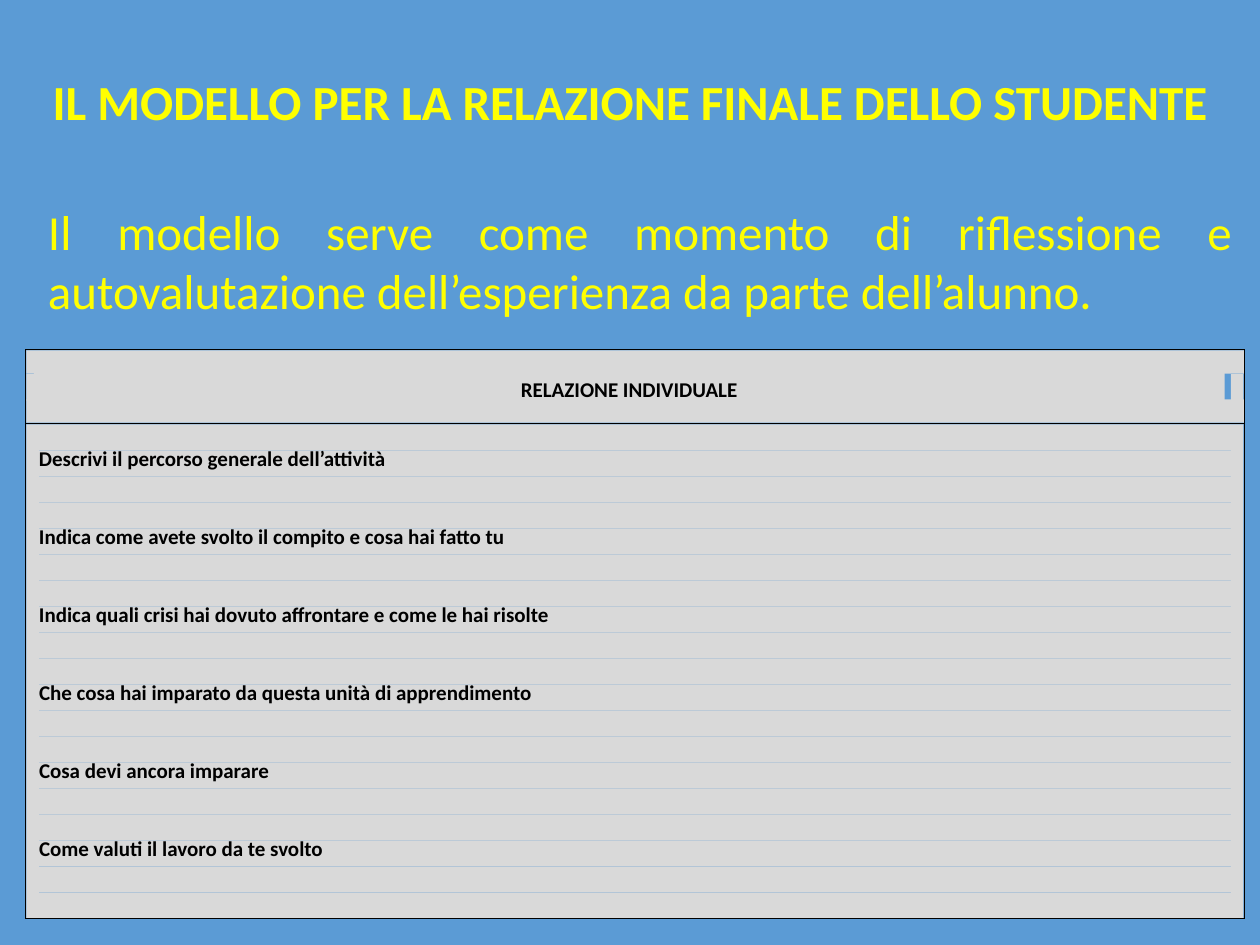
"""Build the slide that presents the student's final report form."""
from lxml import etree
from pptx import Presentation
from pptx.dml.color import RGBColor
from pptx.enum.shapes import MSO_CONNECTOR, MSO_SHAPE
from pptx.enum.text import MSO_ANCHOR, MSO_AUTO_SIZE, PP_ALIGN
from pptx.oxml.ns import qn
from pptx.util import Pt

LEFT, MID, JUST = PP_ALIGN.LEFT, PP_ALIGN.CENTER, PP_ALIGN.JUSTIFY
TOP, GROW, FIXED = MSO_ANCHOR.TOP, MSO_AUTO_SIZE.SHAPE_TO_FIT_TEXT, MSO_AUTO_SIZE.NONE
RECT, LINE = MSO_SHAPE.RECTANGLE, MSO_CONNECTOR.STRAIGHT

BLUE, YELLOW, GREY, BLACK = "5B9BD5", "FFFF00", "D9D9D9", "000000"
TITLE = "IL MODELLO PER LA RELAZIONE FINALE DELLO STUDENTE"
INTRO = ("Il modello serve come momento di riflessione e "
         "autovalutazione dell’esperienza da parte dell’alunno.")
HEAD = "RELAZIONE INDIVIDUALE"
ASKS = [
    ("Descrivi il percorso generale dell’attività", 280.8, 19.4),
    ("Indica come avete svolto il compito e cosa hai fatto tu", 376.6, 17.3),
    ("Indica quali crisi hai dovuto affrontare e come le hai risolte", 412.6, 14.4),
    ("Che cosa hai imparato da questa unità di apprendimento", 406.8, 12.2),
    ("Cosa devi ancora imparare", 244.1, 16.6),
    ("Come valuti il lavoro da te svolto", 286.6, 13.7),
]

X1, X2, Y1, Y2, SPLIT = 14.4, 711.4, 199.8, 524.9, 242.1
EDGE, INNER, WIDE, SIDE = 15.1, 22.3, 681.1, 7.2
ROWS, STEP, FIRST = 19, 14.85, 242.6
ASK_TOP, ASK_GAP = 258.5, 44.55
BANDS = [
    (EDGE, 228.2, 696.2, 13.3), (EDGE, 213.8, SIDE, 15.1),
    (EDGE, 200.2, 696.2, 13.3), (703.4, 213.8, SIDE, 15.1),
]
CELLS = [(x, FIRST, SIDE, ROWS * STEP) for x in (EDGE, 703.4)]
CELLS += [(INNER, FIRST + i * STEP, WIDE, STEP) for i in range(ROWS)]
RULES = [
    (X1, Y1, X2, Y1), (X1, SPLIT, X2, SPLIT), (X1, Y1, X1, Y2),
    (X1, Y2, X2, Y2), (X2, Y1, X2, Y2),
]

BIG = {"name": "Calibri", "size": Pt(28), "bold": False}
BIG_BOLD = {**BIG, "bold": True}
SMALL = {"name": "Calibri", "size": Pt(12), "bold": True}
PLAIN = {"line_spacing": 1.0, "space_before": Pt(0)}
TIGHT = {"line_spacing": 0.72, "space_after": Pt(10), "alignment": LEFT}
FLUSH = {"margin_left": 0, "margin_top": 0, "margin_right": 0, "margin_bottom": 0}
FRAME = {"word_wrap": True, "vertical_anchor": TOP}


def style(obj, vals):
    for key, val in vals.items():
        setattr(obj, key, val)


def paint(color, code):
    color.rgb = RGBColor.from_string(code)


def place(shape, box):
    style(shape, dict(zip(("left", "top", "width", "height"), map(Pt, box))))


def write(shape, text, font, code, para, frame):
    body = shape.text_frame
    body.text = text
    style(body, {**FRAME, **frame})
    line = body.paragraphs[0]
    style(line, para)
    run = line.runs[0]
    style(run.font, font)
    paint(run.font.color, code)
    return line


def block(shapes, box):
    shape = shapes.add_shape(RECT, *map(Pt, box))
    shape.shadow.inherit = False
    shape.fill.solid()
    paint(shape.fill.fore_color, GREY)
    shape.line.fill.background()
    return shape


def rule(shapes, ends):
    line = shapes.add_connector(LINE, *map(Pt, ends))
    line.line.width = Pt(0.48)
    paint(line.line.color, BLACK)
    etree.SubElement(line._element.spPr, qn("a:effectLst"))


def main():
    deck = Presentation()
    style(deck, {"slide_width": Pt(720), "slide_height": Pt(540)})
    slide = deck.slides.add_slide(deck.slide_layouts[1])
    slide.background.fill.solid()
    paint(slide.background.fill.fore_color, BLUE)
    shapes = slide.shapes

    title, intro = slide.placeholders
    place(title, (0, 37.4, 720, 41))
    write(title, TITLE, BIG_BOLD, YELLOW, {**PLAIN, "alignment": MID}, {"auto_size": GROW})
    place(intro, (20.2, 111.6, 691.2, 75))
    line = write(intro, INTRO, BIG, YELLOW, {**PLAIN, "alignment": JUST}, {"auto_size": GROW})
    props = line._p.get_or_add_pPr()
    props.set("marL", "0")
    props.set("indent", "0")
    etree.SubElement(props, qn("a:buNone"))

    for box in BANDS:
        block(shapes, box)
    head = block(shapes, (19.4, 211.7, 680.4, 18))
    write(head, HEAD, SMALL, BLACK, {"alignment": MID}, {"auto_size": FIXED})
    for box in CELLS:
        block(shapes, box)
    for ends in RULES:
        rule(shapes, ends)
    for i, (text, wide, high) in enumerate(ASKS):
        box = shapes.add_textbox(*map(Pt, (INNER, ASK_TOP + i * ASK_GAP, wide, high)))
        write(box, text, SMALL, BLACK, TIGHT, {**FLUSH, "auto_size": FIXED})

    deck.save("out.pptx")


if __name__ == "__main__":
    main()
